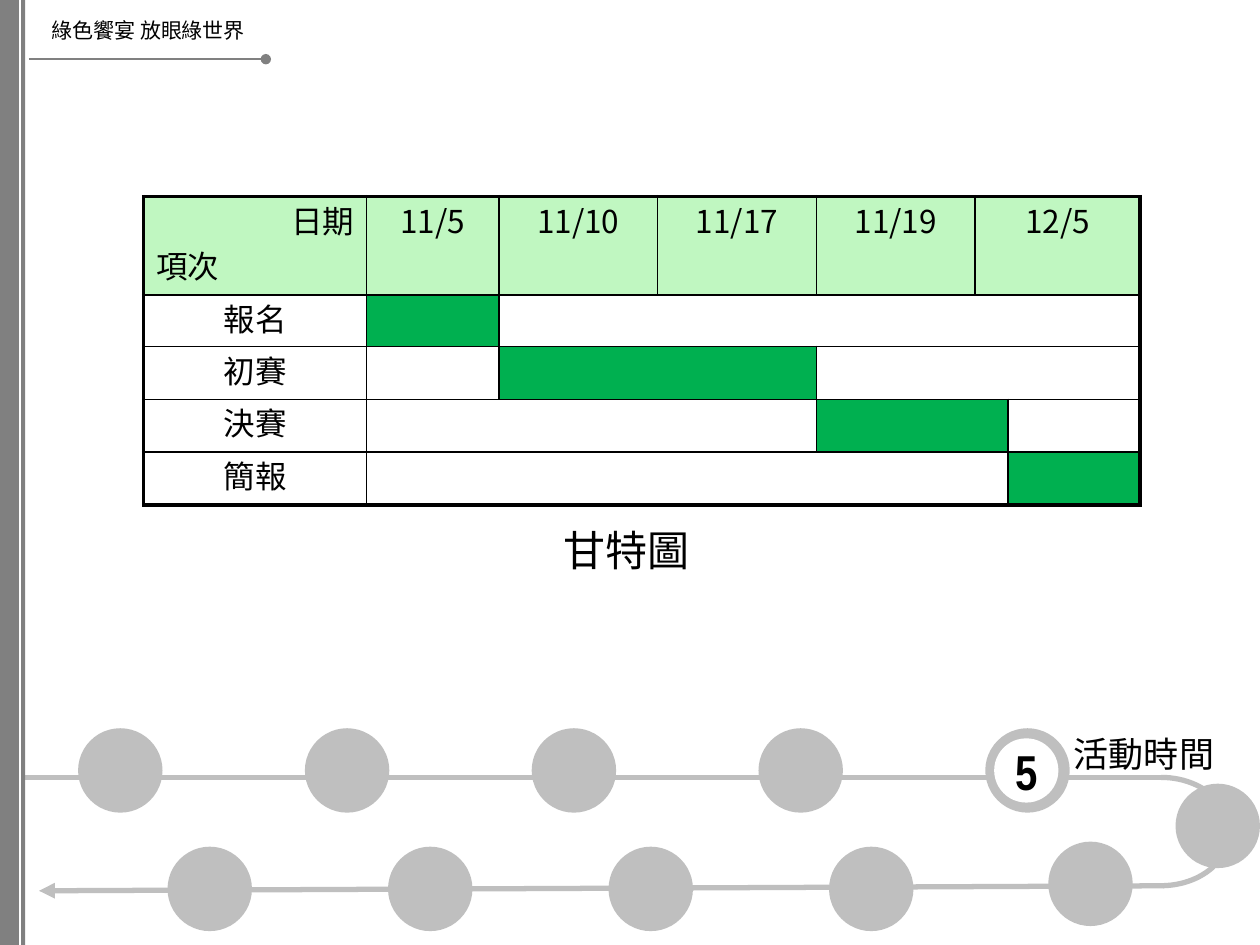
from typing import NamedTuple

from lxml.etree import SubElement
from pptx import Presentation
from pptx.dml.color import RGBColor
from pptx.enum.shapes import MSO_CONNECTOR as Connector, MSO_SHAPE as Shape
from pptx.enum.text import MSO_ANCHOR as Anchor, PP_ALIGN as Align
from pptx.oxml.ns import qn
from pptx.util import Inches, Pt

CJK = "Noto Sans CJK SC"
BLACK, WHITE, GRAY, SILVER = "000000", "FFFFFF", "808080", "BFBFBF"
MINT, GREEN = "C0F7C1", "00B050"
DOT = 0.67


class Bar(NamedTuple):
    """A table cell that covers one or more columns."""
    text: str = ""
    columns: int = 1
    fill: str = ""


class Stroke(NamedTuple):
    start: tuple[float, float]
    end: tuple[float, float]
    color: str
    width: float
    ends: dict[str, str] = {}


STROKES = [
    Stroke((0.16, 7.5), (0.16, 0), WHITE, 1),
    Stroke((0.23, 0.47), (2.11, 0.47), GRAY, 1, {"tailEnd": "oval"}),
    Stroke((0.31, 7.07), (9.24, 7.03), SILVER, 3, {"headEnd": "triangle"}),
]
LOWER_DOTS = [(1.33 + 1.75 * i, 6.72) for i in range(4)] + [(8.32, 6.68)]
UPPER_DOTS = [(0.62 + 1.8 * i, 5.78) for i in range(5)]

COLUMNS = [1.77, 1.05, 1.26, 1.26, 1.26, 0.26, 1.05]
ROWS = [0.78, 0.41, 0.42, 0.42, 0.42]
GANTT = [
    [Bar("日期\n項次", fill=MINT), Bar("11/5", fill=MINT), Bar("11/10", fill=MINT),
     Bar("11/17", fill=MINT), Bar("11/19", fill=MINT), Bar("12/5", 2, MINT)],
    [Bar("報名"), Bar(fill=GREEN), Bar(columns=5)],
    [Bar("初賽"), Bar(), Bar(columns=2, fill=GREEN), Bar(columns=3)],
    [Bar("決賽"), Bar(columns=3), Bar(columns=2, fill=GREEN), Bar()],
    [Bar("簡報"), Bar(columns=5), Bar(fill=GREEN)],
]


def rgb(value: str) -> RGBColor:
    return RGBColor.from_string(value)


def write(para, text: str, *, size: float, font: str = CJK, bold: bool = False,
          align=Align.LEFT, before: float = 0) -> None:
    para.alignment = align
    para.space_before = Pt(before)
    span = para.add_run()
    span.text = text
    span.font.size = Pt(size)
    span.font.bold = bold
    span.font.color.rgb = rgb(BLACK)
    span.font.name = font
    SubElement(span.font._element, qn("a:ea"), typeface=CJK)


def add_stroke(page, stroke: Stroke) -> None:
    points = [Inches(value) for value in (*stroke.start, *stroke.end)]
    line = page.shapes.add_connector(Connector.STRAIGHT, *points)
    line.line.color.rgb = rgb(stroke.color)
    line.line.width = Pt(stroke.width)
    for tag, kind in stroke.ends.items():
        SubElement(line.line._get_or_add_ln(), qn(f"a:{tag}"), type=kind)
    SubElement(line._element.spPr, qn("a:effectLst"))


def add_filled(page, kind, left: float, top: float, width: float, height: float, fill: str):
    shape = page.shapes.add_shape(
        kind, Inches(left), Inches(top), Inches(width), Inches(height))
    shape.shadow.inherit = False
    shape.fill.solid()
    shape.fill.fore_color.rgb = rgb(fill)
    shape.line.fill.background()
    return shape


def add_turn(page) -> None:
    """Draw the bend that joins the upper track to the lower one."""
    arc = page.shapes.add_shape(
        Shape.ARC, Inches(8.67), Inches(6.17), Inches(1.09), Inches(0.86))
    arc.adjustments[0], arc.adjustments[1] = 162, 52.55
    arc.shadow.inherit = False
    arc.fill.background()
    arc.line.color.rgb = rgb(SILVER)
    arc.line.width = Pt(3)


def add_label(page, text: str, left: float, top: float, width: float, height: float,
              *, anchor=Anchor.TOP, wrap: bool = True, **style) -> None:
    box = page.shapes.add_textbox(
        Inches(left), Inches(top), Inches(width), Inches(height))
    box.text_frame.word_wrap = wrap
    box.text_frame.vertical_anchor = anchor
    write(box.text_frame.paragraphs[0], text, **style)


def add_border(cell, side: str, width: float) -> None:
    line = SubElement(cell._tc.get_or_add_tcPr(), qn(f"a:ln{side}"), w=str(Pt(width)))
    fill = SubElement(line, qn("a:solidFill"))
    SubElement(fill, qn("a:srgbClr"), val=BLACK)


def fill_bar(table, row: int, first: int, bar: Bar) -> None:
    last = first + bar.columns - 1
    for column in range(first, last + 1):
        cell = table.cell(row, column)
        if column == first:
            add_border(cell, "L", 2.25 if first == 0 else 1)
        if column in (last, first):
            add_border(cell, "R", 2.25 if last == len(COLUMNS) - 1 else 1)
        add_border(cell, "T", 2.25 if row == 0 else 1)
        add_border(cell, "B", 2.25 if row == len(ROWS) - 1 else 1)
        cell.margin_top = cell.margin_bottom = 0
        if bar.fill:
            cell.fill.solid()
            cell.fill.fore_color.rgb = rgb(bar.fill)
        else:
            cell.fill.background()
    cell = table.cell(row, first)
    if bar.columns > 1:
        cell.merge(table.cell(row, last))
    if not bar.text:
        return
    title, *below = bar.text.split("\n")
    frame = cell.text_frame
    write(frame.paragraphs[0], title, size=18, before=3.6,
          align=Align.RIGHT if below else Align.CENTER)
    for text in below:
        write(frame.add_paragraph(), text, size=18)


def add_gantt(page) -> None:
    frame = page.shapes.add_table(
        len(ROWS), len(COLUMNS), Inches(1.14), Inches(1.56),
        Inches(sum(COLUMNS)), Inches(sum(ROWS)))
    table = frame.table
    table.first_row = table.horz_banding = False
    for column, width in zip(table.columns, COLUMNS):
        column.width = Inches(width)
    for row, height in zip(table.rows, ROWS):
        row.height = Inches(height)
    for row, bars in enumerate(GANTT):
        first = 0
        for bar in bars:
            fill_bar(table, row, first, bar)
            first += bar.columns


def add_step_number(page) -> None:
    badge = add_filled(page, Shape.OVAL, 7.89, 5.86, 0.51, 0.51, WHITE)
    frame = badge.text_frame
    frame.margin_left = frame.margin_right = frame.margin_top = frame.margin_bottom = 0
    frame.vertical_anchor = Anchor.MIDDLE
    write(frame.paragraphs[0], "5", size=28, font="Arial Narrow", bold=True,
          align=Align.CENTER)


def main() -> None:
    deck = Presentation()
    deck.slide_width, deck.slide_height = Inches(10), Inches(7.5)
    page = deck.slides.add_slide(deck.slide_layouts[6])

    add_stroke(page, Stroke((0, 6.17), (9.22, 6.17), SILVER, 3))
    add_filled(page, Shape.RECTANGLE, -0.06, 0, 0.26, 7.5, GRAY)
    for stroke in STROKES:
        add_stroke(page, stroke)
    add_label(page, "綠色饗宴 放眼綠世界", 0.31, 0.09, 1.95, 0.3,
              wrap=False, size=12, font="Arial")
    for left, top in [*LOWER_DOTS, (9.33, 6.22)]:
        add_filled(page, Shape.OVAL, left, top, DOT, DOT, SILVER)
    add_turn(page)
    for left, top in UPPER_DOTS:
        add_filled(page, Shape.OVAL, left, top, DOT, DOT, SILVER)

    add_gantt(page)
    add_label(page, "甘特圖", 4.37, 4.11, 1.42, 0.5, size=24)
    add_label(page, "活動時間", 8.16, 5.7, 1.84, 0.56,
              anchor=Anchor.MIDDLE, size=20, align=Align.CENTER)
    add_step_number(page)
    deck.save("out.pptx")


if __name__ == "__main__":
    main()
